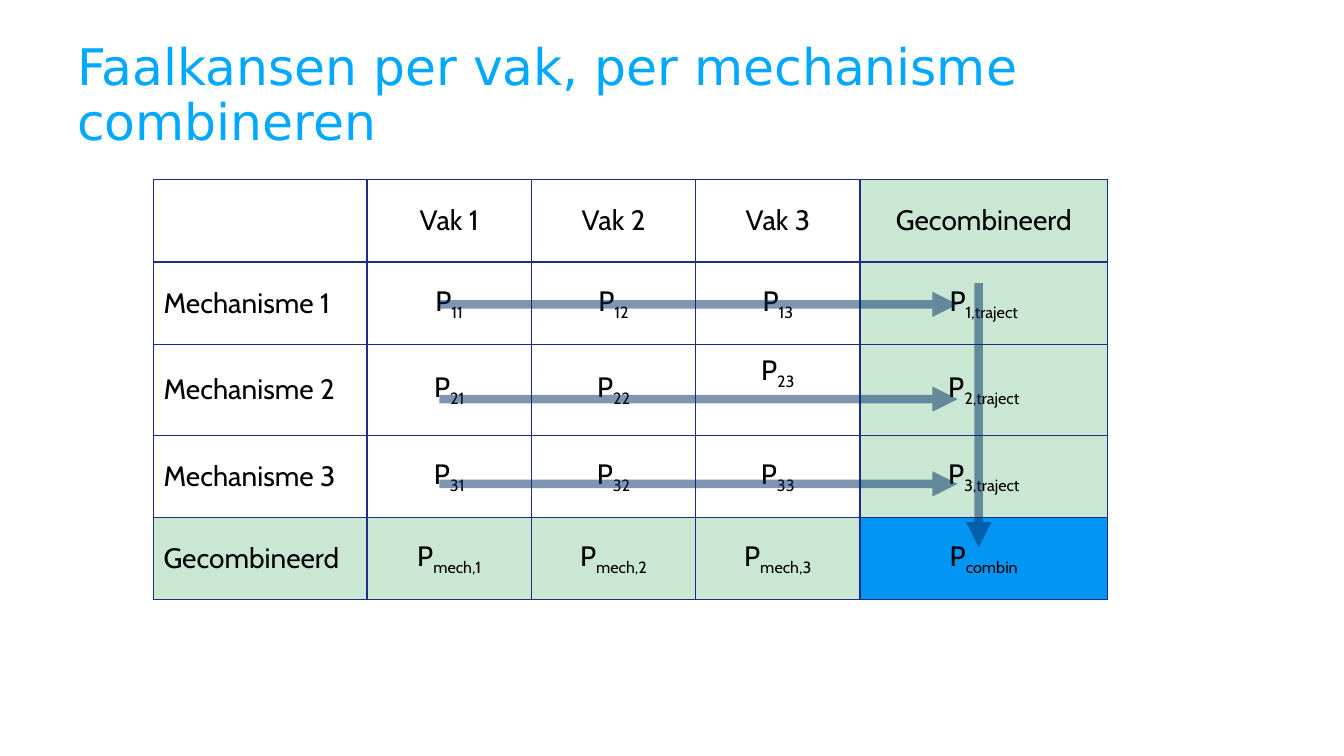
"""Build the slide that combines failure probabilities per section and mechanism."""
from lxml.etree import SubElement
from pptx import Presentation
from pptx.dml.color import RGBColor
from pptx.enum.shapes import MSO_CONNECTOR
from pptx.enum.text import MSO_ANCHOR, MSO_AUTO_SIZE, PP_ALIGN
from pptx.oxml.ns import qn
from pptx.util import Pt


def paint(fill, color):
    fill.solid()
    fill.fore_color.rgb = RGBColor.from_string(color)


def write(paragraph, text, subscript="", size=20, font="Cabin", color="000000",
          align=PP_ALIGN.CENTER):
    paragraph.alignment = align
    for part in filter(None, (text, subscript)):
        run = paragraph.add_run()
        run.text = part
        run.font.size = Pt(size)
        run.font.name = font
        paint(run.font.fill, color)
        if part == subscript:
            run.font._element.set("baseline", "-25000")


presentation = Presentation()
presentation.slide_width, presentation.slide_height = Pt(960), Pt(540)
slide = presentation.slides.add_slide(presentation.slide_layouts[5])

title = slide.shapes.title
title.left, title.top, title.width, title.height = Pt(48), Pt(21.6), Pt(864), Pt(90)
title_frame = title.text_frame
title_frame.word_wrap = True
title_frame.auto_size = MSO_AUTO_SIZE.NONE
title_frame.vertical_anchor = MSO_ANCHOR.BOTTOM
title_frame.paragraphs[0].line_spacing = 0.9
write(title_frame.paragraphs[0], "Faalkansen per vak, per mechanisme combineren",
      size=36, font="DejaVu Sans", color="00A8FF", align=PP_ALIGN.LEFT)

column_widths = [152.6, 117.4, 117.4, 117.4, 176.8]
row_heights = [58.8, 58.8, 65, 58.8, 58.8]
rows = [["", "Vak 1", "Vak 2", "Vak 3", "Gecombineerd"]]
for number in range(1, 4):
    rows.append([f"Mechanisme {number}", f"{number}1", f"{number}2", f"{number}3",
                 f"{number},traject"])
rows.append(["Gecombineerd", "mech,1", "mech,2", "mech,3", "combin"])

table = slide.shapes.add_table(5, 5, Pt(109.6), Pt(128.3), Pt(sum(column_widths)),
                               Pt(sum(row_heights))).table
table.first_row = table.horz_banding = False
for column, width in zip(table.columns, column_widths):
    column.width = Pt(width)
for row, height in zip(table.rows, row_heights):
    row.height = Pt(height)

for row_index, row in enumerate(rows):
    for column_index, text in enumerate(row):
        cell = table.cell(row_index, column_index)
        cell.vertical_anchor = MSO_ANCHOR.MIDDLE
        cell.margin_left = cell.margin_right = Pt(7.2)
        cell.margin_top = cell.margin_bottom = 0
        paragraph = cell.text_frame.paragraphs[0]
        if row_index and column_index:
            write(paragraph, "P", subscript=text)
        else:
            write(paragraph, text, align=PP_ALIGN.CENTER if column_index else PP_ALIGN.LEFT)

        properties = cell._tc.get_or_add_tcPr()
        for side in ("a:lnL", "a:lnR", "a:lnT", "a:lnB"):
            border = SubElement(properties, qn(side), w=str(Pt(1)))
            border_fill = SubElement(border, qn("a:solidFill"))
            SubElement(border_fill, qn("a:srgbClr"), val="1D2C89")

        if row_index == column_index == 4:
            paint(cell.fill, "0395F4")
        elif 4 in (row_index, column_index):
            paint(cell.fill, "CAE7D4")
        else:
            cell.fill.background()

table.cell(2, 3).margin_bottom = Pt(24)

arrows = [(313.9, y, 684, y) for y in (217.4, 285.1, 345.6)]
arrows.append((699.1, 202.3, 699.1, 391))
for ends in arrows:
    arrow = slide.shapes.add_connector(MSO_CONNECTOR.STRAIGHT, *map(Pt, ends))
    arrow.line.width = Pt(6)
    paint(arrow.line.fill, "002C62")
    line = arrow.line._get_or_add_ln()
    SubElement(line.find(".//" + qn("a:srgbClr")), qn("a:alpha"), val="50000")
    SubElement(line, qn("a:tailEnd"), type="triangle")
    SubElement(arrow._element.spPr, qn("a:effectLst"))

presentation.save("out.pptx")
